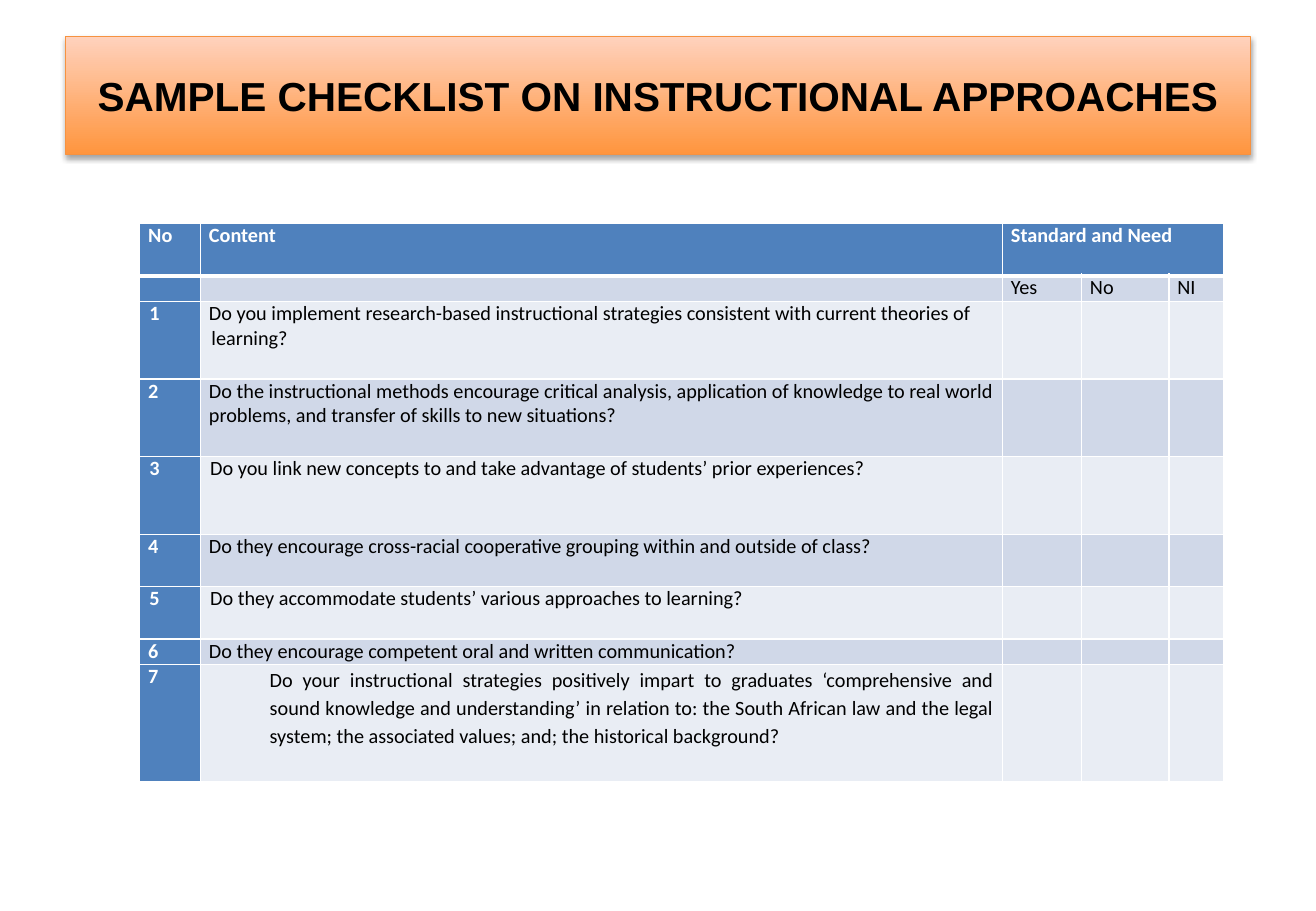
"""Build the instructional approaches checklist slide."""
from dataclasses import dataclass

from lxml import etree
from pptx import Presentation
from pptx import util as u
from pptx.dml.color import RGBColor
from pptx.enum import shapes, text
from pptx.oxml.ns import qn


@dataclass(frozen=True)
class Theme:
    title_font: str = "Arial"
    body_font: str = "Calibri"
    title_size: int = 24
    body_size: int = 12
    ink: str = "000000"
    white: str = "FFFFFF"
    accent: str = "4F81BD"
    bands: tuple = ("E9EDF4", "D0D8E8")
    banner_bottom: str = "FF953E"
    banner_top: str = "FFD2BD"
    banner_line: str = "F69240"


@dataclass(frozen=True)
class Question:
    wording: str
    number_left: float = 0
    left: float = 0
    first_line: float = 0
    justified: bool = True
    line_spacing: float = 1


THEME = Theme()
COLUMN_WIDTHS = (0.5, 6.6, 0.65, 0.72, 0.45)
ROW_HEIGHTS = (0.43, 0.21, 0.64, 0.64, 0.64, 0.43, 0.43, 0.21, 0.97)
HEADINGS = ("No", "Content", "Standard and Need")
RATINGS = ("Yes", "No", "NI")
QUESTIONS = (
    Question("Do you implement research-based instructional strategies consistent with "
             "current theories of learning?", 0.01, 0.02, -0.02, False),
    Question("Do the instructional methods encourage critical analysis, application of "
             "knowledge to real world problems, and transfer of skills to new situations?"),
    Question("Do you link new concepts to and take advantage of students’ prior experiences?",
             0.01, 0, 0.01, False),
    Question("Do they encourage cross-racial cooperative grouping within and outside of class?"),
    Question("Do they accommodate students’ various approaches to learning?",
             0.01, 0.01, 0, False),
    Question("Do they encourage competent oral and written communication?"),
    Question("Do your instructional strategies positively impart to graduates ‘comprehensive "
             "and sound knowledge and understanding’ in relation to: the South African law and "
             "the legal system; the associated values; and; the historical background?",
             left=0.5, line_spacing=1.15),
)


def add_run(paragraph, wording, font_name, size, color, bold):
    """Add one formatted run to a paragraph."""
    run = paragraph.add_run()
    run.text = wording
    run.font.name = font_name
    run.font.size = u.Pt(size)
    run.font.bold = bold
    run.font.color.rgb = RGBColor.from_string(color)


def add_shadow(shape):
    """Give a shape a soft shadow below it."""
    shape.shadow.inherit = False
    effects = shape._element.spPr.find(qn("a:effectLst"))
    shadow = etree.SubElement(effects, qn("a:outerShdw"), blurRad=str(u.Pt(3.1)),
                              dist=str(u.Pt(1.8)), dir="5400000", rotWithShape="0")
    color = etree.SubElement(shadow, qn("a:srgbClr"), val=THEME.ink)
    etree.SubElement(color, qn("a:alpha"), val="35000")


def add_banner(slide, wording):
    """Draw the title on a gradient rectangle."""
    banner = slide.shapes.add_shape(shapes.MSO_SHAPE.RECTANGLE, u.Inches(0.54), u.Inches(0.3),
                                    u.Inches(9.75), u.Inches(0.97))
    banner.fill.gradient()
    banner.fill.gradient_angle = 90
    for stop, color in zip(banner.fill.gradient_stops, (THEME.banner_bottom, THEME.banner_top)):
        stop.color.rgb = RGBColor.from_string(color)
    banner.line.color.rgb = RGBColor.from_string(THEME.banner_line)
    banner.line.width = u.Pt(0.75)
    add_shadow(banner)
    frame = banner.text_frame
    frame.word_wrap = True
    frame.vertical_anchor = text.MSO_ANCHOR.MIDDLE
    paragraph = frame.paragraphs[0]
    paragraph.alignment = text.PP_ALIGN.CENTER
    add_run(paragraph, wording, THEME.title_font, THEME.title_size, THEME.ink, True)


def style_cell(cell, fill, top=1, bottom=1):
    """Set the margins, white borders and fill of a cell, and its empty text size."""
    cell.margin_left = cell.margin_right = u.Inches(0.07)
    cell.margin_top = cell.margin_bottom = 0
    properties = cell._tc.get_or_add_tcPr()
    for side, width in (("L", 1), ("R", 1), ("T", top), ("B", bottom)):
        line = etree.SubElement(properties, qn(f"a:ln{side}"), w=str(u.Pt(width)))
        solid = etree.SubElement(line, qn("a:solidFill"))
        etree.SubElement(solid, qn("a:srgbClr"), val=THEME.white)
    cell.fill.solid()
    cell.fill.fore_color.rgb = RGBColor.from_string(fill)
    etree.SubElement(cell.text_frame.paragraphs[0]._p, qn("a:endParaRPr"),
                     sz=str(THEME.body_size * 100))


def write_cell(cell, wording, color=THEME.ink, bold=False, left=0, first_line=0, justified=True):
    """Write one paragraph into a cell and return it."""
    paragraph = cell.text_frame.paragraphs[0]
    paragraph.alignment = text.PP_ALIGN.JUSTIFY if justified else text.PP_ALIGN.LEFT
    properties = paragraph._p.get_or_add_pPr()
    properties.set("marL", str(u.Inches(left)))
    properties.set("indent", str(u.Inches(first_line)))
    add_run(paragraph, wording, THEME.body_font, THEME.body_size, color, bold)
    return paragraph


def style_table(table):
    """Size the table and style its header, number column and bands."""
    for column, width in zip(table.columns, COLUMN_WIDTHS):
        column.width = u.Inches(width)
    for row_index, height in enumerate(ROW_HEIGHTS):
        row = table.rows[row_index]
        row.height = u.Inches(height)
        for column_index, cell in enumerate(row.cells):
            accented = row_index == 0 or column_index == 0
            fill = THEME.accent if accented else THEME.bands[row_index % 2]
            style_cell(cell, fill, 3 if row_index == 1 else 1, 3 if row_index == 0 else 1)
    table.cell(0, 2).merge(table.cell(0, 4))


def add_checklist(slide):
    """Add the checklist table with its headings, ratings and questions."""
    frame = slide.shapes.add_table(len(ROW_HEIGHTS), len(COLUMN_WIDTHS), u.Inches(1.15),
                                   u.Inches(1.84), u.Inches(sum(COLUMN_WIDTHS)),
                                   u.Inches(sum(ROW_HEIGHTS)))
    table = frame.table
    style_table(table)
    for column_index, heading in enumerate(HEADINGS):
        write_cell(table.cell(0, column_index), heading, THEME.white, True)
    for column_index, rating in enumerate(RATINGS, 2):
        write_cell(table.cell(1, column_index), rating)
    for number, question in enumerate(QUESTIONS, 1):
        write_cell(table.cell(number + 1, 0), str(number), THEME.white, True,
                   question.number_left)
        paragraph = write_cell(table.cell(number + 1, 1), question.wording, left=question.left,
                               first_line=question.first_line, justified=question.justified)
        paragraph.line_spacing = question.line_spacing


def main():
    """Create and save the presentation."""
    presentation = Presentation()
    presentation.slide_width = u.Inches(10.83)
    presentation.slide_height = u.Inches(7.5)
    slide = presentation.slides.add_slide(presentation.slide_layouts[6])
    add_banner(slide, "SAMPLE CHECKLIST ON INSTRUCTIONAL APPROACHES")
    add_checklist(slide)
    presentation.save("out.pptx")


if __name__ == "__main__":
    main()
